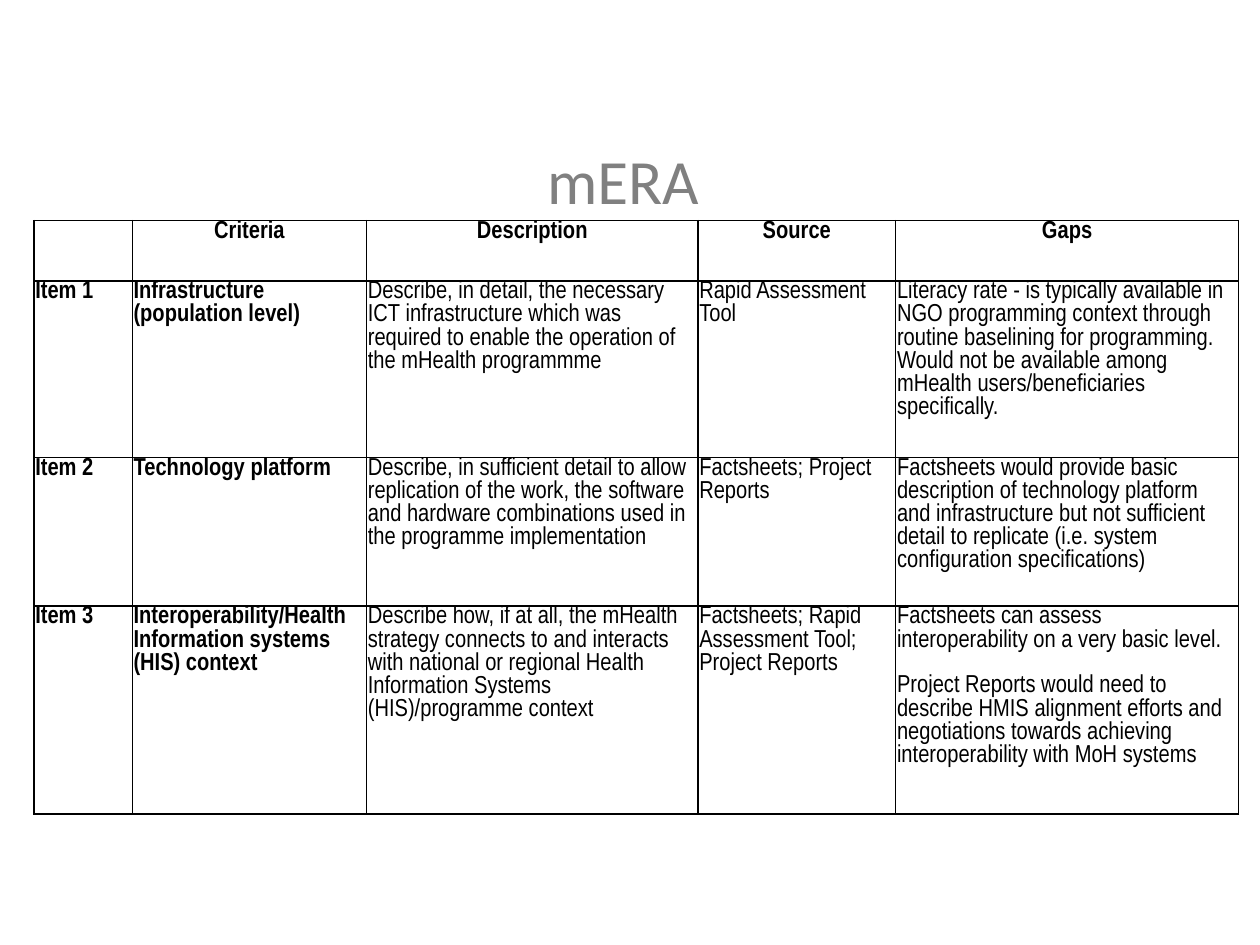
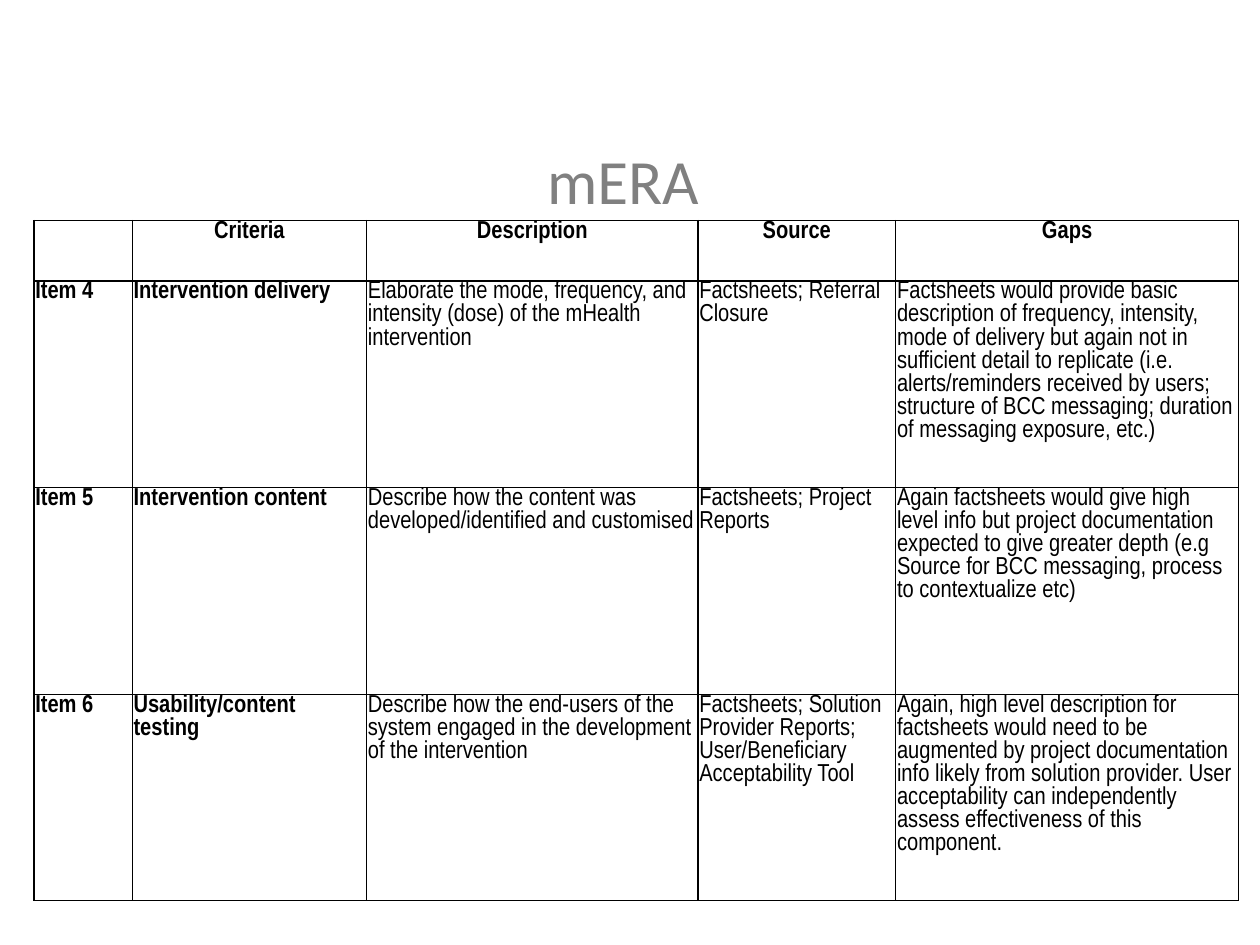
from lxml.etree import SubElement
from pptx import Presentation
from pptx.dml.color import RGBColor
from pptx.enum.text import MSO_ANCHOR as Anchor, PP_ALIGN as Align
from pptx.oxml.ns import qn
from pptx.util import Inches, Pt

COLORS = {"title": "808080", "text": "000000", "border": "000000"}
TITLE_FONT, TABLE_FONT = "Calibri", "Arial Narrow"
TITLE = "mERA "
HEADINGS = ("", "Criteria", "Description", "Source", "Gaps")

PAGES = [
    {
        "heights": (1.4, 1.18, 1.65),
        "items": [
            ("Item 1", "Infrastructure (population level)",
             "Describe, in detail, the necessary ICT infrastructure which was required "
             "to enable the operation of the mHealth programmme",
             "Rapid Assessment Tool",
             "Literacy rate - is typically available in NGO programming context through "
             "routine baselining for programming. Would not be available among mHealth "
             "users/beneficiaries specifically."),
            ("Item 2", "Technology platform",
             "Describe, in sufficient detail to allow replication of the work, the software "
             "and hardware combinations used in the programme implementation",
             "Factsheets; Project Reports",
             "Factsheets would provide basic description of technology platform and "
             "infrastructure but not sufficient detail to replicate (i.e. system "
             "configuration specifications)"),
            ("Item 3", "Interoperability/Health Information systems (HIS) context",
             "Describe how, if at all, the mHealth strategy connects to and interacts with "
             "national or regional Health Information Systems (HIS)/programme context",
             "Factsheets; Rapid Assessment Tool; Project Reports",
             "Factsheets can assess interoperability on a very basic level.\n"
             "Project Reports would need to describe HMIS alignment efforts and "
             "negotiations towards achieving interoperability with MoH systems"),
        ],
    },
    {
        "heights": (1.64, 1.64, 1.64),
        "items": [
            ("Item 4", "Intervention delivery",
             "Elaborate the mode, frequency, and intensity (dose) of the mHealth intervention",
             "Factsheets; Referral Closure",
             "Factsheets would provide basic description of frequency, intensity, mode of "
             "delivery but again not in sufficient detail to replicate (i.e. "
             "alerts/reminders received by users; structure of BCC messaging; duration of "
             "messaging exposure, etc.)"),
            ("Item 5", "Intervention content",
             "Describe how the content was developed/identified and customised",
             "Factsheets; Project Reports",
             "Again factsheets would give high level info but project documentation "
             "expected to give greater depth (e.g Source for BCC messaging, process to "
             "contextualize etc)"),
            ("Item 6", "Usability/content testing",
             "Describe how the end-users of the system engaged in the development of the "
             "intervention",
             "Factsheets; Solution Provider Reports; User/Beneficiary Acceptability Tool",
             "Again, high level description for factsheets would need to be augmented by "
             "project documentation info likely from solution provider. User acceptability "
             "can independently assess effectiveness of this component."),
        ],
    },
]

TITLE_TOP, TITLE_HEIGHT = 1.01, 0.82
TABLE_LEFT, TABLE_TOP = 0.27, 1.75
COLUMN_WIDTHS = (0.78, 1.86, 2.63, 1.57, 2.72)
HEADER_HEIGHT = 0.48
BOLD_COLUMNS = 2


def write(frame, text, font=TABLE_FONT, size=14, color="text", bold=False,
          align=Align.LEFT, after=13):
    for index, line in enumerate(text.split("\n")):
        para = frame.paragraphs[0] if index == 0 else frame.add_paragraph()
        para.alignment = align
        para.space_before, para.space_after = Pt(0), Pt(after)
        span = para.add_run()
        span.text = line
        span.font.name, span.font.size, span.font.bold = font, Pt(size), bold
        span.font.color.rgb = RGBColor.from_string(COLORS[color])


def style_cell(cell):
    cell.margin_left = cell.margin_right = Inches(0.01)
    cell.margin_top = cell.margin_bottom = 0
    cell.fill.background()
    properties = cell._tc.get_or_add_tcPr()
    for index, side in enumerate(("lnL", "lnR", "lnT", "lnB")):
        line = SubElement(properties, qn(f"a:{side}"), w=str(Pt(0.75)))
        fill = SubElement(line, qn("a:solidFill"))
        SubElement(fill, qn("a:srgbClr"), val=COLORS["border"])
        properties.insert(index, line)


def add_title(page, width):
    box = page.shapes.title
    box.left, box.top = 0, Inches(TITLE_TOP)
    box.width, box.height = width, Inches(TITLE_HEIGHT)
    box.text_frame.vertical_anchor = Anchor.MIDDLE
    write(box.text_frame, TITLE, font=TITLE_FONT, size=36, color="title",
          align=Align.CENTER, after=0)


def add_criteria_table(page, items, item_heights):
    rows = [HEADINGS, *items]
    heights = (HEADER_HEIGHT, *item_heights)
    table = page.shapes.add_table(
        len(rows), len(HEADINGS), Inches(TABLE_LEFT), Inches(TABLE_TOP),
        Inches(sum(COLUMN_WIDTHS)), Inches(sum(heights))).table
    table.first_row = table.horz_banding = False
    for column, width in zip(table.columns, COLUMN_WIDTHS):
        column.width = Inches(width)
    for row, height in zip(table.rows, heights):
        row.height = Inches(height)
    for row_index, texts in enumerate(rows):
        is_header = row_index == 0
        for column_index, text in enumerate(texts):
            cell = table.cell(row_index, column_index)
            style_cell(cell)
            if text:
                write(cell.text_frame, text,
                      bold=is_header or column_index < BOLD_COLUMNS,
                      align=Align.CENTER if is_header else Align.LEFT)


def main():
    deck = Presentation()
    deck.slide_width, deck.slide_height = Inches(10), Inches(7.5)
    for content in PAGES:
        page = deck.slides.add_slide(deck.slide_layouts.get_by_name("Title Only"))
        add_title(page, deck.slide_width)
        add_criteria_table(page, content["items"], content["heights"])
    deck.save("out.pptx")


if __name__ == "__main__":
    main()
